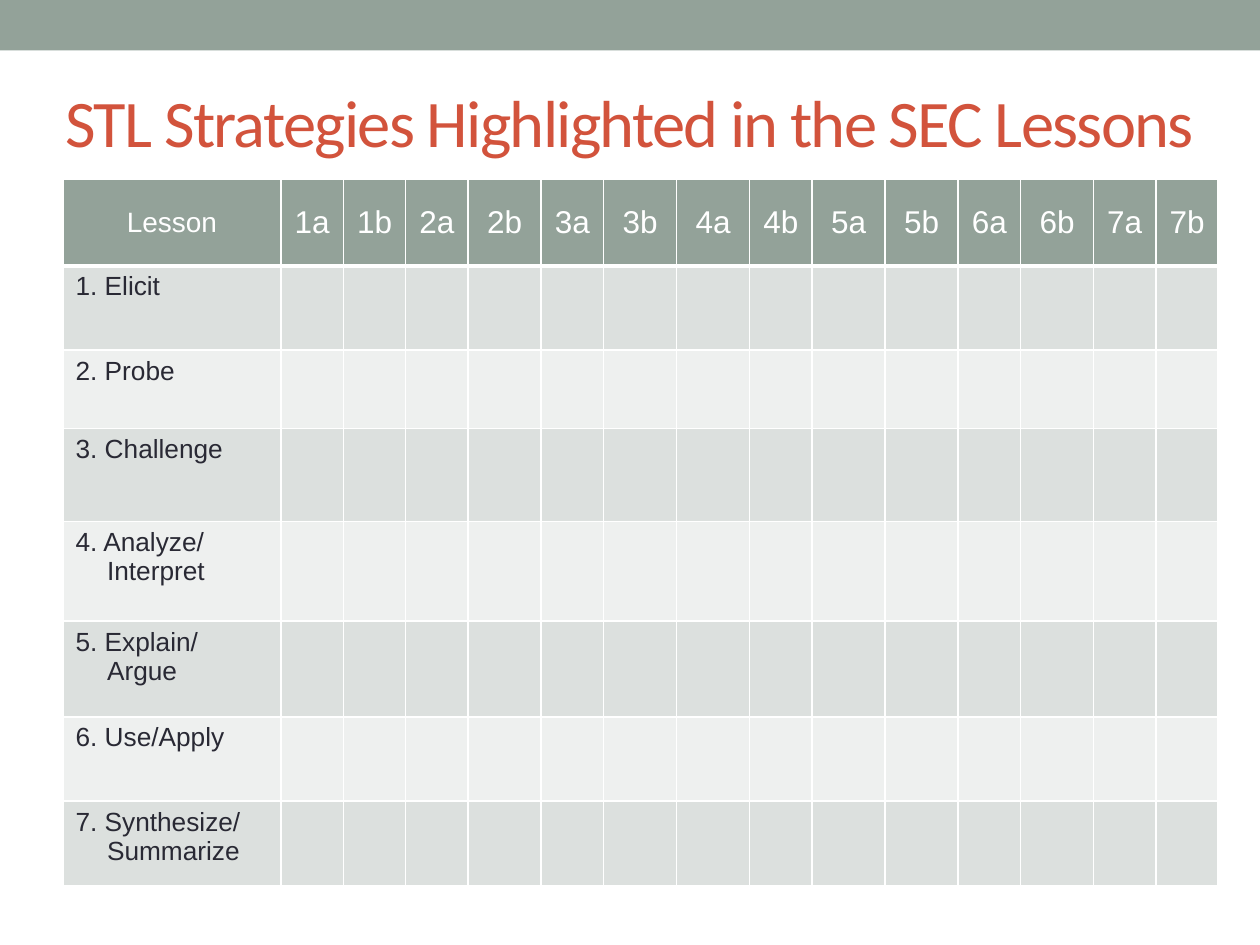
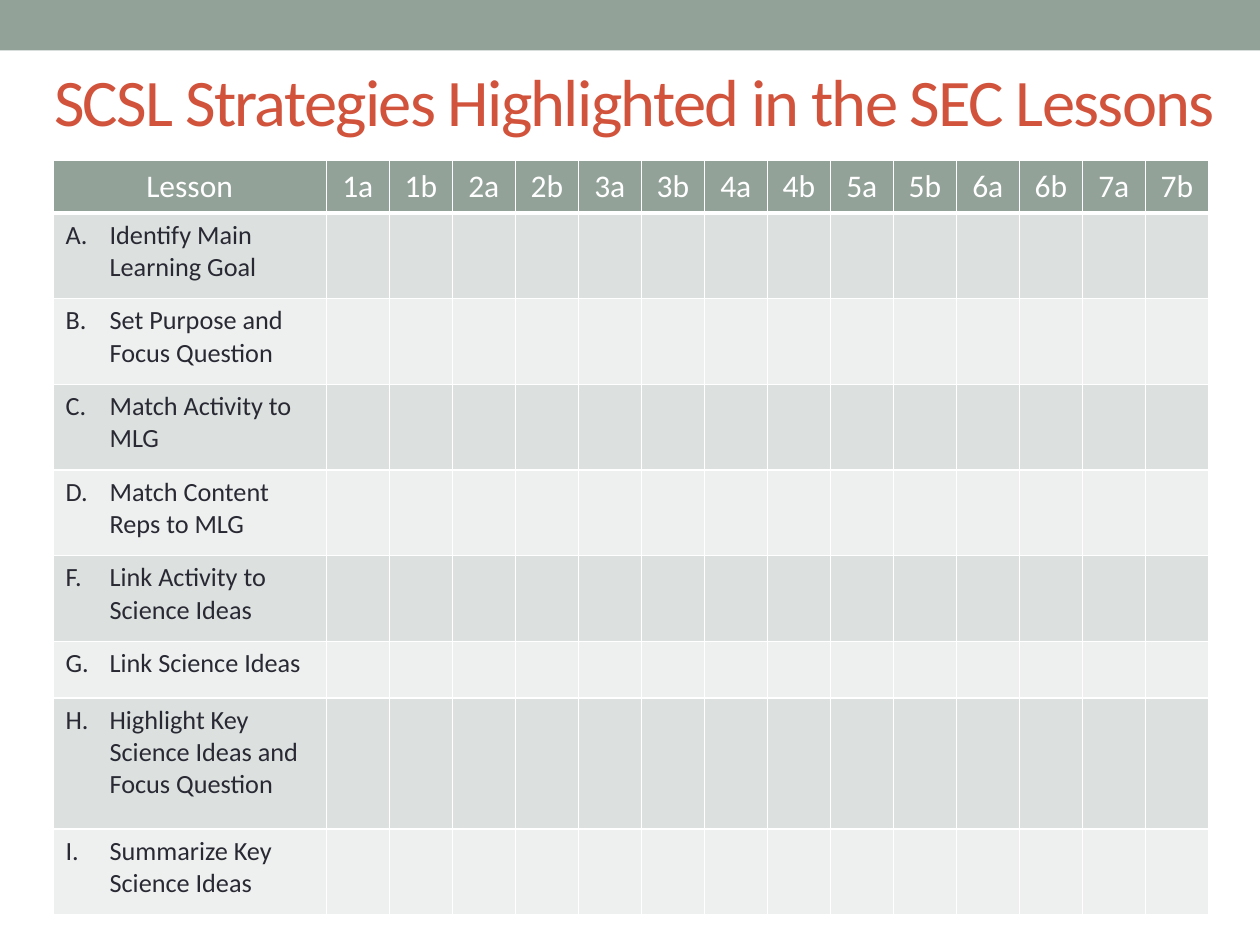
"""Build two slides with blank strategy-by-lesson grids."""
from dataclasses import dataclass

from lxml import etree
from pptx import Presentation
from pptx.dml.color import RGBColor
from pptx.enum.shapes import MSO_SHAPE
from pptx.enum.text import MSO_ANCHOR, MSO_AUTO_SIZE, PP_ALIGN
from pptx.oxml.ns import qn
from pptx.util import Inches, Pt

RECTANGLE = MSO_SHAPE.RECTANGLE
MIDDLE, TOP = MSO_ANCHOR.MIDDLE, MSO_ANCHOR.TOP
CENTER, LEFT = PP_ALIGN.CENTER, PP_ALIGN.LEFT
NO_FIT = MSO_AUTO_SIZE.NONE
TITLE_ONLY = 5


@dataclass(frozen=True)
class Theme:
    sage: str = "93A299"
    brick: str = "D2533C"
    ink: str = "292934"
    white: str = "FFFFFF"
    bands: tuple = ("DCE0DE", "EEF0EF")
    title_font: str = "Calibri"
    title_size: int = 38
    title_tracking: int = -100
    lesson_size: int = 18
    strategy_size: int = 15
    rule: int = 1
    header_rule: int = 3


THEME = Theme()
SLIDE_SIZE = (10, 7.5)
BAND_HEIGHT = 0.4
GRID_WIDTH = 9.17
WIDE_COLUMN = 0.58
LESSONS = [f"{unit}{part}" for unit in range(1, 8) for part in "ab"]

GRIDS = [
    {
        "title": "STL Strategies Highlighted in the SEC Lessons",
        "title_box": (0.42, 0.42, 9.33, 1.08),
        "origin": (0.5, 1.42),
        "font": "Arial",
        "corner_size": 16,
        "label_width": 1.73,
        "wide_lessons": {"2b", "3b", "4a", "5a", "5b", "6b"},
        "hanging": 0.25,
        "header_height": 0.69,
        "strategies": [
            ("1. Elicit", 0.67),
            ("2. Probe", 0.62),
            ("3. Challenge", 0.74),
            ("4. Analyze/ Interpret", 0.79),
            ("5. Explain/ Argue", 0.76),
            ("6. Use/Apply", 0.67),
            ("7. Synthesize/\vSummarize", 0.67),
        ],
    },
    {
        "title": "SCSL Strategies Highlighted in the SEC Lessons",
        "title_box": (0.33, 0.25, 9.42, 1.08),
        "origin": (0.42, 1.27),
        "font": "Calibri",
        "corner_size": 18,
        "label_width": 2.17,
        "wide_lessons": set(),
        "hanging": 0.35,
        "header_height": 0.42,
        "strategies": [
            ("A.\tIdentify Main Learning Goal", 0.68),
            ("B.\tSet Purpose and Focus Question", 0.68),
            ("C.\tMatch Activity to MLG", 0.68),
            ("D.\tMatch Content Reps to MLG", 0.68),
            ("F.\tLink Activity to Science Ideas", 0.68),
            ("G.\tLink Science Ideas", 0.45),
            ("H.\tHighlight Key Science Ideas and Focus Question", 1.04),
            ("I.\tSummarize Key Science Ideas", 0.68),
        ],
    },
]


def paint(target, color):
    target.fill.solid()
    target.fill.fore_color.rgb = RGBColor.from_string(color)


def style(paragraph, font, size, color):
    for run in paragraph.runs:
        run.font.name = font
        run.font.size = Pt(size)
        run.font.bold = False
        run.font.color.rgb = RGBColor.from_string(color)


def draw_borders(cell, bottom):
    properties = cell._tc.get_or_add_tcPr()
    widths = {"lnL": THEME.rule, "lnR": THEME.rule, "lnT": THEME.rule, "lnB": bottom}
    for position, (side, width) in enumerate(widths.items()):
        line = etree.Element(qn(f"a:{side}"), w=str(Pt(width)))
        fill = etree.SubElement(line, qn("a:solidFill"))
        etree.SubElement(fill, qn("a:srgbClr"), val=THEME.white)
        properties.insert(position, line)


def add_master_band(prs, slide):
    band = slide.shapes.add_shape(RECTANGLE, 0, 0, prs.slide_width, Inches(BAND_HEIGHT))
    band.shadow.inherit = False
    paint(band, THEME.sage)
    band.line.fill.background()
    prs.slide_master.shapes.element.insert(2, band.element)


def set_title(slide, text, box):
    title = slide.shapes.title
    title.left, title.top, title.width, title.height = map(Inches, box)
    frame = title.text_frame
    frame.text = text
    frame.word_wrap = True
    frame.auto_size = NO_FIT
    frame.vertical_anchor = MIDDLE
    paragraph = frame.paragraphs[0]
    paragraph.alignment = LEFT
    style(paragraph, THEME.title_font, THEME.title_size, THEME.brick)
    paragraph.runs[0].font._element.set("spc", str(THEME.title_tracking))


def column_widths(grid):
    wide = grid["wide_lessons"]
    free = GRID_WIDTH - grid["label_width"] - len(wide) * WIDE_COLUMN
    narrow = free / (len(LESSONS) - len(wide))
    return [grid["label_width"]] + [WIDE_COLUMN if name in wide else narrow for name in LESSONS]


def fill_header(table, grid):
    for column, name in enumerate(["Lesson"] + LESSONS):
        cell = table.cell(0, column)
        cell.text_frame.text = name
        cell.vertical_anchor = MIDDLE
        paragraph = cell.text_frame.paragraphs[0]
        paragraph.alignment = CENTER
        size = THEME.lesson_size if column else grid["corner_size"]
        style(paragraph, grid["font"], size, THEME.white)
        paint(cell, THEME.sage)
        draw_borders(cell, THEME.header_rule)


def fill_strategies(table, grid):
    indent = Inches(grid["hanging"])
    for row, (strategy, _) in enumerate(grid["strategies"], start=1):
        for column in range(len(LESSONS) + 1):
            cell = table.cell(row, column)
            paint(cell, THEME.bands[(row - 1) % 2])
            draw_borders(cell, THEME.rule)
        label = table.cell(row, 0)
        label.text_frame.text = strategy
        label.vertical_anchor = TOP
        paragraph = label.text_frame.paragraphs[0]
        properties = paragraph._p.get_or_add_pPr()
        properties.set("marL", str(indent))
        properties.set("indent", str(-indent))
        style(paragraph, grid["font"], THEME.strategy_size, THEME.ink)


def add_grid(slide, grid):
    heights = [grid["header_height"]] + [height for _, height in grid["strategies"]]
    widths = column_widths(grid)
    left, top = grid["origin"]
    box = map(Inches, (left, top, GRID_WIDTH, sum(heights)))
    table = slide.shapes.add_table(len(heights), len(widths), *box).table
    table.horz_banding = False
    for column, width in zip(table.columns, widths):
        column.width = Inches(width)
    for row, height in zip(table.rows, heights):
        row.height = Inches(height)
    fill_header(table, grid)
    fill_strategies(table, grid)


def main():
    prs = Presentation()
    prs.slide_width, prs.slide_height = map(Inches, SLIDE_SIZE)
    for grid in GRIDS:
        slide = prs.slides.add_slide(prs.slide_layouts[TITLE_ONLY])
        set_title(slide, grid["title"], grid["title_box"])
        add_grid(slide, grid)
    add_master_band(prs, prs.slides[0])
    prs.save("out.pptx")


if __name__ == "__main__":
    main()
